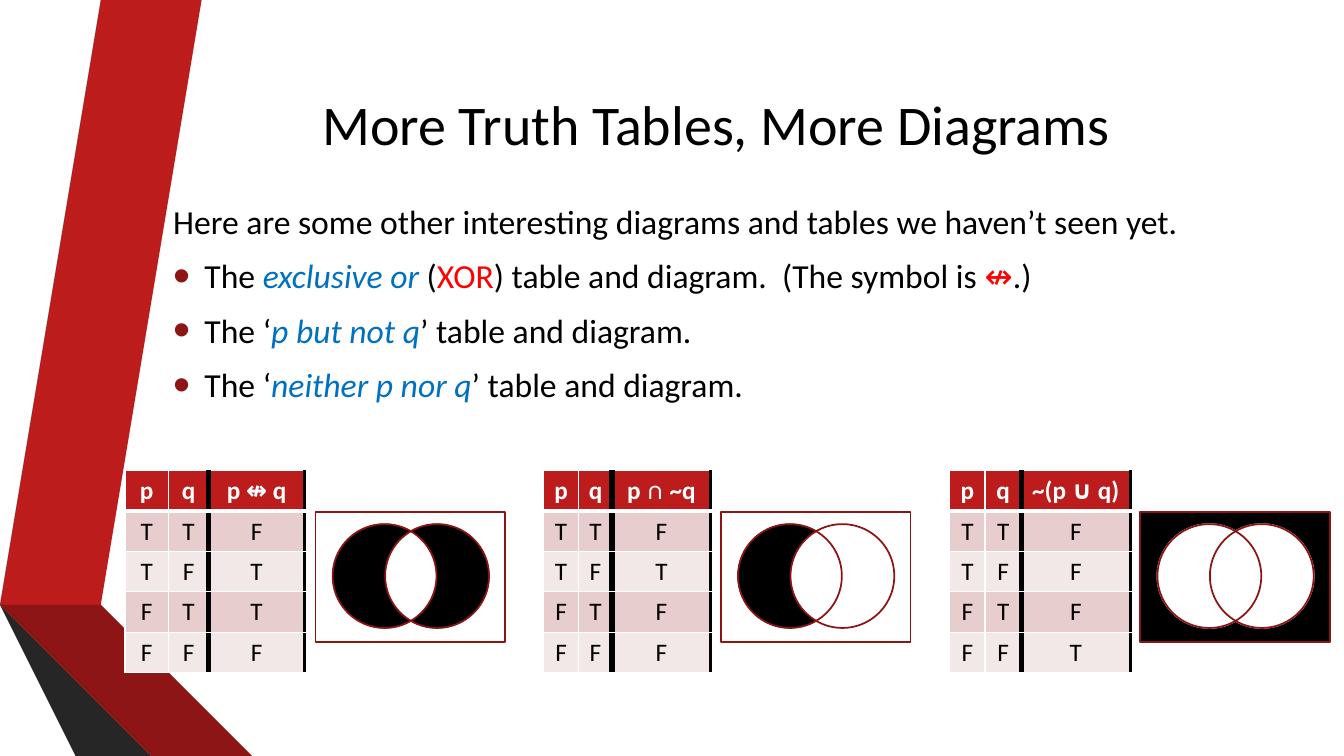
from dataclasses import dataclass
from typing import Optional

from lxml import etree
from pptx import Presentation
from pptx.dml.color import RGBColor
from pptx.enum.shapes import MSO_SHAPE
from pptx.enum.text import MSO_ANCHOR, PP_ALIGN
from pptx.oxml.ns import qn
from pptx.util import Inches, Pt

ARC, ELLIPSE, RECTANGLE = MSO_SHAPE.ARC, MSO_SHAPE.OVAL, MSO_SHAPE.RECTANGLE
CENTER, MIDDLE = PP_ALIGN.CENTER, MSO_ANCHOR.MIDDLE
FONT = "Calibri"
COLORS = {
    "black": "000000", "white": "FFFFFF", "blue": "0070C0", "bright red": "FF0000",
    "red": "BC1C1C", "dark red": "8D1515", "deep red": "5E0E0E", "outline": "8B1515",
    "gray": "595959", "dark gray": "404040", "deep gray": "262626",
    "odd row": "E7CDCD", "even row": "F3E8E8",
}

# Circle geometry, in inches; arc angles in degrees
CIRCLE_SIZE, CIRCLE_TOP, CIRCLE_LEFTS = 1.03, 5.2, (0.17, 0.69)
FRAME_TOP, FRAME_WIDTH, FRAME_HEIGHT = 5.08, 1.88, 1.29
CRESCENT, LENS = (59.8, 300.8), (119.7, 240.3)
TABLE_TOP, ROW_HEIGHT = 4.67, 0.4


@dataclass
class Ribbon:
    color: str
    points: list[tuple[float, float]]


@dataclass
class Span:
    text: str
    color: str = "black"
    italic: bool = False


@dataclass
class Region:
    circle: int
    fill: str
    angles: Optional[tuple[float, float]] = None
    rotation: int = 0


@dataclass
class Panel:
    heading: str
    results: str
    table_left: float
    widths: tuple[float, float, float]
    frame_left: float
    backing: str
    regions: list[Region]


RIBBONS = [
    Ribbon("red", [(0.5, 5.78), (0.77, 5.83), (1.73, 0), (1.45, 0)]),
    Ribbon("gray", [(1.39, 0), (1.11, 0), (0.16, 5.73), (0.44, 5.77)]),
    Ribbon("deep gray", [(0.16, 5.73), (1.45, 7.5), (1.51, 7.5)]),
    Ribbon("deep red", [(0.5, 5.79), (2.08, 7.5), (2.14, 7.5)]),
    Ribbon("dark red", [(0.5, 5.79), (2.14, 7.5), (2.83, 7.5), (0.77, 5.83), (0.5, 5.78)]),
    Ribbon("dark gray", [(2.02, 7.5), (0.48, 5.83), (0.43, 5.78), (0.44, 5.77),
                         (0.16, 5.73), (1.51, 7.5)]),
]

INTRO = [Span("Here are some other interesting diagrams and tables we haven’t seen yet.")]
BULLETS = [
    [Span("The "), Span("exclusive or ", "blue", True), Span("("), Span("XOR", "bright red"),
     Span(") table and diagram.  (The symbol is "), Span("↮", "bright red"), Span(".)")],
    [Span("The ‘"), Span("p but not q", "blue", True), Span("’ table and diagram.")],
    [Span("The ‘"), Span("neither p nor q", "blue", True), Span("’ table and diagram.")],
]

LEFT_ONLY = [Region(0, "black", CRESCENT), Region(1, "white", LENS)]
RIGHT_ONLY = [Region(1, "black", CRESCENT, 180), Region(0, "white", LENS, 180)]
PANELS = [
    Panel("p ↮ q", "FTTF", 1.24, (0.43, 0.4, 0.95), 3.13, "white", RIGHT_ONLY + LEFT_ONLY),
    Panel("p ∩ ~q", "FTFF", 5.39, (0.35, 0.33, 0.98), 7.15, "white", LEFT_ONLY),
    Panel("~(p ∪ q)", "FFFT", 9.42, (0.35, 0.36, 1.08), 11.31, "black",
          [Region(0, "white"), Region(1, "white")]),
]


def rgb(name: str) -> RGBColor:
    return RGBColor.from_string(COLORS[name])


def add_span(para, text: str, size: float, color: str, bold=False, italic=False) -> None:
    span = para.add_run()
    span.text = text
    span.font.name, span.font.size = FONT, Pt(size)
    span.font.bold, span.font.italic = bold, italic
    span.font.color.rgb = rgb(color)


def style_shape(shape, fill: Optional[str], line: Optional[str] = None, width: float = 1.25) -> None:
    shape.shadow.inherit = False
    if fill:
        shape.fill.solid()
        shape.fill.fore_color.rgb = rgb(fill)
    else:
        shape.fill.background()
    if line:
        shape.line.color.rgb = rgb(line)
        shape.line.width = Pt(width)
    else:
        shape.line.fill.background()


def add_ribbons(page) -> None:
    group = page.shapes.add_group_shape()
    for ribbon in RIBBONS:
        builder = group.shapes.build_freeform(*ribbon.points[0], scale=Inches(1))
        builder.add_line_segments(ribbon.points[1:], close=True)
        style_shape(builder.convert_to_shape(), ribbon.color)


def add_bullet(para) -> None:
    properties = para._p.get_or_add_pPr()
    properties.set("marL", str(Inches(0.31)))
    properties.set("indent", str(-Inches(0.31)))
    color = etree.SubElement(properties, qn("a:buClr"))
    etree.SubElement(color, qn("a:srgbClr"), val=COLORS["dark red"])
    etree.SubElement(properties, qn("a:buSzPct"), val="145000")
    etree.SubElement(properties, qn("a:buFont"), typeface="Arial")
    etree.SubElement(properties, qn("a:buChar"), char="•")


def add_body(page) -> None:
    box = page.shapes.add_textbox(Inches(1.62), Inches(1.94), Inches(10.96), Inches(2.61))
    frame = box.text_frame
    frame.word_wrap = True
    for index, spans in enumerate([INTRO] + BULLETS):
        para = frame.add_paragraph() if index else frame.paragraphs[0]
        para.space_before, para.space_after = Pt(4.2), Pt(6)
        if index:
            add_bullet(para)
        for span in spans:
            add_span(para, span.text, 24, span.color, italic=span.italic)


def set_borders(cell, row: int, column: int) -> None:
    thin, divider, edge = ("white", 1), ("black", 4.5), ("black", 2.25)
    borders = {
        "a:lnL": divider if column == 2 else thin,
        "a:lnR": (thin, divider, edge)[column],
        "a:lnT": ("white", 3) if row == 1 else thin,
        "a:lnB": ("white", 3) if row == 0 else thin,
    }
    properties = cell._tc.get_or_add_tcPr()
    for tag, (color, width) in borders.items():
        line = etree.SubElement(properties, qn(tag), w=str(Pt(width)))
        fill = etree.SubElement(line, qn("a:solidFill"))
        etree.SubElement(fill, qn("a:srgbClr"), val=COLORS[color])


def add_truth_table(page, panel: Panel) -> None:
    rows = [("p", "q", panel.heading), *zip("TTFF", "TFTF", panel.results)]
    table = page.shapes.add_table(
        len(rows), 3, Inches(panel.table_left), Inches(TABLE_TOP),
        Inches(sum(panel.widths)), Inches(ROW_HEIGHT * len(rows))).table
    for column, width in enumerate(panel.widths):
        table.columns[column].width = Inches(width)
    for row, texts in enumerate(rows):
        header = row == 0
        for column, text in enumerate(texts):
            cell = table.cell(row, column)
            set_borders(cell, row, column)
            cell.fill.solid()
            cell.fill.fore_color.rgb = rgb("red" if header else "odd row" if row % 2 else "even row")
            para = cell.text_frame.paragraphs[0]
            para.alignment = CENTER
            add_span(para, text, 18, "white" if header else "black", bold=header)


def add_diagram(page, panel: Panel) -> None:
    shapes = page.shapes.add_group_shape().shapes
    frame_box = [Inches(v) for v in (panel.frame_left, FRAME_TOP, FRAME_WIDTH, FRAME_HEIGHT)]

    def add_circle(kind, circle: int):
        return shapes.add_shape(kind, Inches(panel.frame_left + CIRCLE_LEFTS[circle]),
                                Inches(CIRCLE_TOP), Inches(CIRCLE_SIZE), Inches(CIRCLE_SIZE))

    style_shape(shapes.add_shape(RECTANGLE, *frame_box), panel.backing)
    # Shaded regions
    for region in panel.regions:
        shape = add_circle(ARC if region.angles else ELLIPSE, region.circle)
        shape.rotation = region.rotation
        if region.angles:
            for index, angle in enumerate(region.angles):
                shape.adjustments[index] = angle * 0.6
            style_shape(shape, region.fill, "black", 0.75)
        else:
            style_shape(shape, region.fill, "white")
    # Outlines
    for circle in range(2):
        style_shape(add_circle(ELLIPSE, circle), None, "outline")
    style_shape(shapes.add_shape(RECTANGLE, *frame_box), None, "outline")


def main() -> None:
    deck = Presentation()
    deck.slide_width, deck.slide_height = Inches(13.33), Inches(7.5)
    page = deck.slides.add_slide(deck.slide_layouts[5])
    add_ribbons(page)

    # Title
    title = page.shapes.title
    title.left, title.top, title.width, title.height = map(Inches, (1.62, 0.75, 10.96, 0.95))
    title.text_frame.vertical_anchor = MIDDLE
    para = title.text_frame.paragraphs[0]
    para.alignment = CENTER
    add_span(para, "More Truth Tables, More Diagrams", 40, "black")

    add_body(page)
    for panel in PANELS:
        add_truth_table(page, panel)
    for panel in PANELS:
        add_diagram(page, panel)
    deck.save("out.pptx")


if __name__ == "__main__":
    main()
